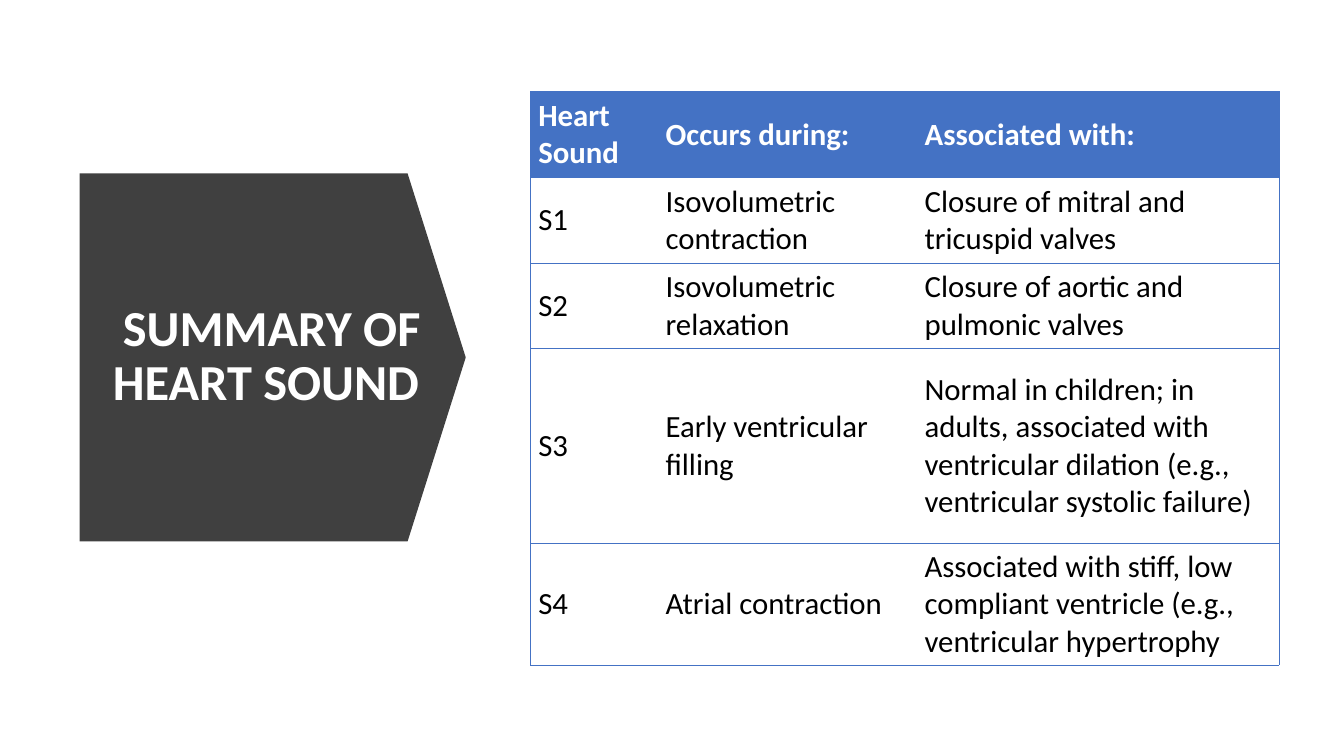
from lxml import etree
from pptx import Presentation
from pptx.dml.color import RGBColor
from pptx.enum.shapes import MSO_SHAPE
from pptx.enum.text import MSO_ANCHOR, PP_ALIGN
from pptx.oxml.ns import qn
from pptx.util import Pt

DOWN_ARROW = MSO_SHAPE.DOWN_ARROW
MIDDLE = MSO_ANCHOR.MIDDLE
CENTER = PP_ALIGN.CENTER

WHITE = RGBColor(0xFF, 0xFF, 0xFF)
BLACK = RGBColor(0x00, 0x00, 0x00)
CHARCOAL = RGBColor(0x40, 0x40, 0x40)
BLUE = RGBColor(0x44, 0x72, 0xC4)
FONT = "Calibri"

HEART_SOUNDS = [
    ("Heart Sound", "Occurs during:", "Associated with:"),
    ("S1", "Isovolumetric contraction", "Closure of mitral and tricuspid valves"),
    ("S2", "Isovolumetric relaxation", "Closure of aortic and pulmonic valves"),
    ("S3", "Early ventricular filling",
     "Normal in children; in adults, associated with ventricular dilation "
     "(e.g., ventricular systolic failure)"),
    ("S4", "Atrial contraction",
     "Associated with stiff, low compliant ventricle "
     "(e.g., ventricular hypertrophy"),
]
COLUMN_WIDTHS = (91, 185, 258.5)
ROW_HEIGHTS = (61.2, 61.2, 61.2, 139, 87)


def add_run(paragraph, text, size, color, bold):
    """Append one styled run to a paragraph."""
    run = paragraph.add_run()
    run.text = text
    run.font.name = FONT
    run.font.size = Pt(size)
    run.font.bold = bold
    run.font.color.rgb = color


def add_title_arrow(slide):
    """Draw the block arrow pointing right, behind the title."""
    arrow = slide.shapes.add_shape(DOWN_ARROW, Pt(63.4), Pt(117.4), Pt(262.8), Pt(275.8))
    arrow.rotation = 270
    arrow.adjustments[0] = 1
    arrow.adjustments[1] = 0.158
    arrow.shadow.inherit = False
    arrow.fill.solid()
    arrow.fill.fore_color.rgb = CHARCOAL
    arrow.line.fill.background()


def add_title(slide, text):
    """Place the slide title on the arrow."""
    title = slide.shapes.add_textbox(Pt(56.2), Pt(154.8), Pt(275.8), Pt(200.9))
    frame = title.text_frame
    frame.word_wrap = True
    frame.vertical_anchor = MIDDLE
    paragraph = frame.paragraphs[0]
    paragraph.alignment = CENTER
    paragraph.line_spacing = 0.9
    paragraph.space_after = Pt(6)
    add_run(paragraph, text, 36, WHITE, True)


def set_border(cell, side, color):
    """Draw one cell edge, or clear it when there is no color."""
    edge = etree.SubElement(cell._tc.get_or_add_tcPr(), qn(f"a:ln{side}"), w=str(Pt(0.5)))
    if color is None:
        etree.SubElement(edge, qn("a:noFill"))
    else:
        fill = etree.SubElement(edge, qn("a:solidFill"))
        etree.SubElement(fill, qn("a:srgbClr"), val=str(color))


def fill_cell(cell, text, is_header, is_first, is_last):
    """Write and style one cell of the table."""
    cell.vertical_anchor = MIDDLE
    cell.margin_left = cell.margin_right = Pt(5.5)
    cell.margin_top = cell.margin_bottom = Pt(2.8)
    set_border(cell, "L", BLUE if is_first else None)
    set_border(cell, "R", BLUE if is_last else None)
    set_border(cell, "T", BLUE)
    set_border(cell, "B", BLUE)
    if is_header:
        cell.fill.solid()
        cell.fill.fore_color.rgb = BLUE
    else:
        cell.fill.background()
    color = WHITE if is_header else BLACK
    add_run(cell.text_frame.paragraphs[0], text, 22, color, is_header)


def add_sound_table(slide):
    """Build the table of heart sounds."""
    table = slide.shapes.add_table(
        len(ROW_HEIGHTS), len(COLUMN_WIDTHS), Pt(379), Pt(65.5),
        Pt(sum(COLUMN_WIDTHS)), Pt(sum(ROW_HEIGHTS))).table
    table.horz_banding = False
    for column, width in zip(table.columns, COLUMN_WIDTHS):
        column.width = Pt(width)
    for row, height in zip(table.rows, ROW_HEIGHTS):
        row.height = Pt(height)
    last = len(COLUMN_WIDTHS) - 1
    for r, sound in enumerate(HEART_SOUNDS):
        for c, text in enumerate(sound):
            fill_cell(table.cell(r, c), text, r == 0, c == 0, c == last)


def main():
    """Build and save the slide."""
    presentation = Presentation()
    presentation.slide_width = Pt(960)
    presentation.slide_height = Pt(540)
    slide = presentation.slides.add_slide(presentation.slide_layouts[6])
    add_title_arrow(slide)
    add_title(slide, "SUMMARY OF HEART SOUND ")
    add_sound_table(slide)
    presentation.save("out.pptx")


if __name__ == "__main__":
    main()
